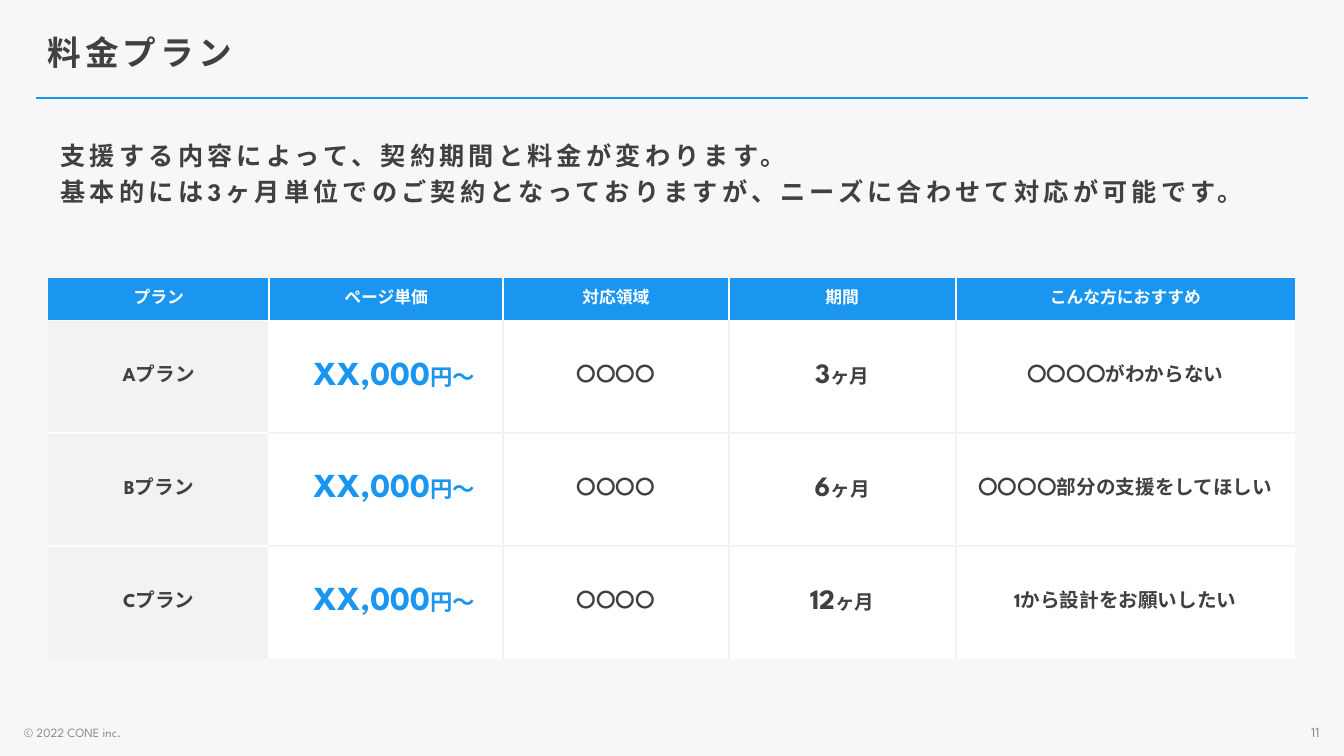
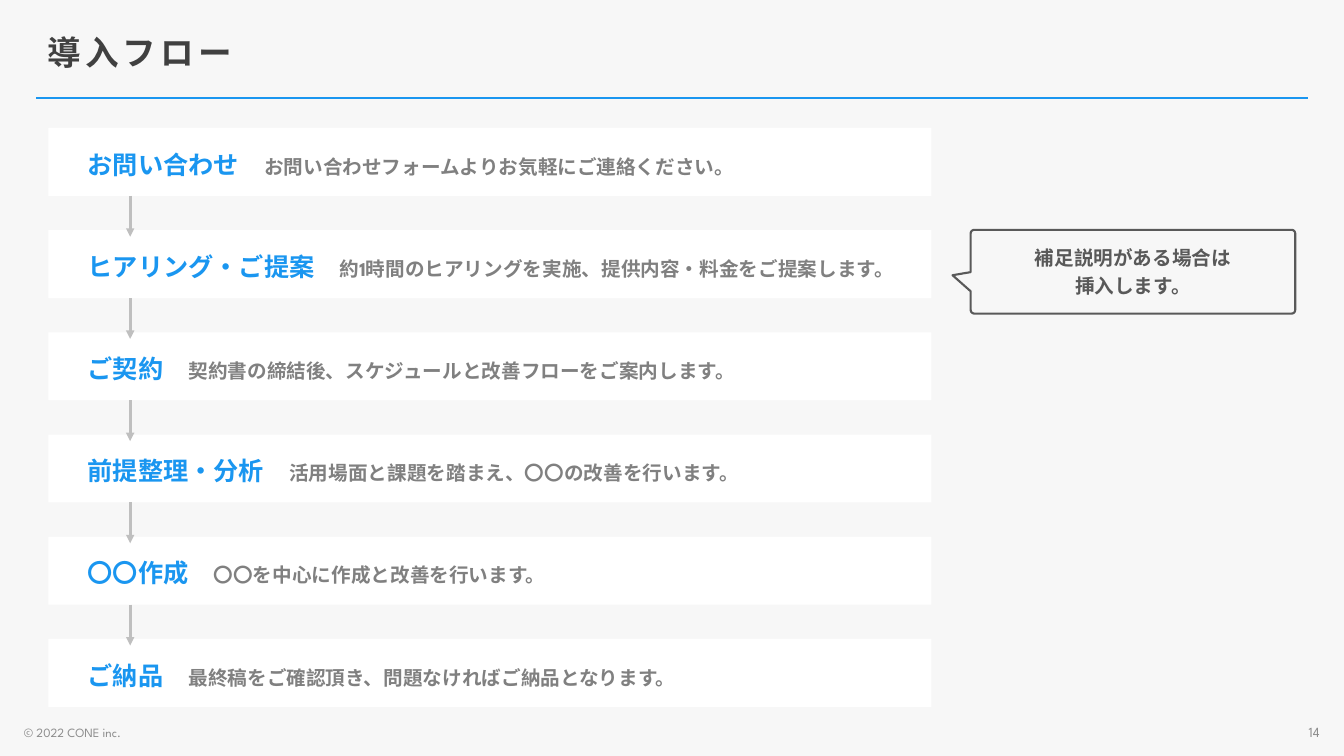
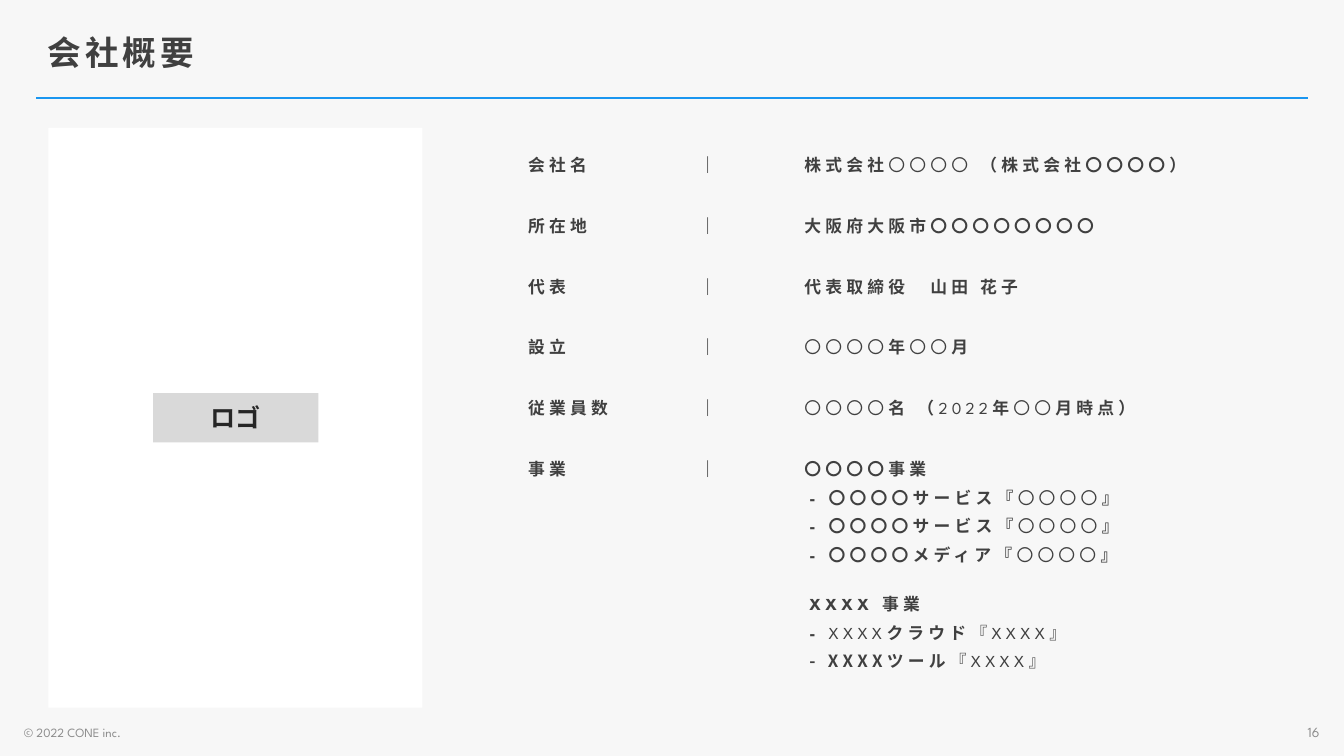
from dataclasses import dataclass
from itertools import pairwise
from math import cos, radians, sin
from typing import Optional, Sequence

from lxml.etree import SubElement
from pptx import Presentation
from pptx.dml.color import RGBColor
from pptx.enum.shapes import MSO_CONNECTOR as Conn, MSO_SHAPE as Shape
from pptx.enum.text import MSO_ANCHOR as Anchor, MSO_AUTO_SIZE as AutoSize, PP_ALIGN as Align
from pptx.oxml.ns import qn
from pptx.util import Pt


@dataclass(frozen=True)
class Theme:
    accent: str = "1A96F0"
    back: str = "F7F7F7"
    white: str = "FFFFFF"
    pale: str = "F2F2F2"
    ink: str = "404040"
    logo_ink: str = "262626"
    callout: str = "595959"
    muted: str = "808080"
    footer: str = "8C8C8C"
    arrow: str = "BFBFBF"
    logo: str = "D9D9D9"
    font: str = "League Spartan"
    cjk: str = "Noto Sans CJK JP"
    title: float = 24
    price: float = 24
    months: float = 20
    lead: float = 18
    unit: float = 16
    body: float = 14
    small: float = 12
    number: float = 10
    copyright: float = 9
    tracking: float = 3


T = Theme()
NO_STYLE = "{2D5ABB26-0587-4C30-8999-92F81FD0307C}"
LEFT, TOP = 34.6, 91.4
DEFAULT_INSETS = (7.2, 3.6, 7.2, 3.6)


@dataclass(frozen=True)
class Run:
    text: str
    size: float = T.body
    color: str = T.ink
    bold: bool = True
    tracking: float = 0
    latin: str = T.font
    cjk: str = T.font


@dataclass(frozen=True)
class Plan:
    name: str
    months: str
    audience: str


@dataclass(frozen=True)
class Step:
    name: str
    detail: str


@dataclass(frozen=True)
class Detail:
    """A line whose segments alternate between bold and regular."""
    segments: Sequence[str]
    before: float = 3
    bold_latin: str = T.font


@dataclass(frozen=True)
class Fact:
    label: str
    lines: Sequence[Detail]


PLANS = [
    Plan("Aプラン", "3", "〇〇〇〇がわからない"),
    Plan("Bプラン", "6", "〇〇〇〇部分の支援をしてほしい"),
    Plan("Cプラン", "12", "1から設計をお願いしたい"),
]
STEPS = [
    Step("お問い合わせ", "お問い合わせフォームよりお気軽にご連絡ください。"),
    Step("ヒアリング・ご提案", "約1時間のヒアリングを実施、提供内容・料金をご提案します。"),
    Step("ご契約", "契約書の締結後、スケジュールと改善フローをご案内します。"),
    Step("前提整理・分析", "活用場面と課題を踏まえ、〇〇の改善を行います。"),
    Step("〇〇作成", "〇〇を中心に作成と改善を行います。"),
    Step("ご納品", "最終稿をご確認頂き、問題なければご納品となります。"),
]
FACTS = [
    Fact("会社名", [Detail(["株式会社", "〇〇〇〇 ", "（株式会社〇〇〇〇）"])]),
    Fact("所在地", [Detail(["大阪府大阪市〇〇〇〇〇〇〇〇"])]),
    Fact("代表", [Detail(["代表取締役　山田 花子"])]),
    Fact("設立", [Detail(["", "〇〇〇〇", "年", "〇〇", "月"])]),
    Fact("従業員数", [Detail(["", "〇〇〇〇", "名 （", "2022", "年", "〇〇", "月時点）"])]),
    Fact("事業", [
        Detail(["〇〇〇〇事業"]),
        Detail(["- 〇〇〇〇サービス『", "〇〇〇〇", "』"]),
        Detail(["- 〇〇〇〇サービス『", "〇〇〇〇", "』"]),
        Detail(["- 〇〇〇〇メディア『", "〇〇〇〇", "』"]),
        Detail(["XXXX 事業"], before=18),
        Detail(["- ", "XXXX", "クラウド", "『XXXX』"]),
        Detail(["- XXXXツール", "『XXXX』"], bold_latin=T.cjk),
    ]),
]


def rgb(color: str) -> RGBColor:
    return RGBColor.from_string(color)


def add_runs(p, runs: Sequence[Run], align=Align.LEFT, before: float = 0,
             spacing: Optional[float] = None) -> None:
    p.alignment = align
    if before:
        p.space_before = Pt(before)
    if spacing:
        p.line_spacing = spacing
    for run in runs:
        r = p.add_run()
        r.text = run.text
        r.font.size = Pt(run.size)
        r.font.bold = run.bold
        r.font.color.rgb = rgb(run.color)
        r.font.name = run.latin
        props = r._r.get_or_add_rPr()
        SubElement(props, qn("a:ea"), typeface=run.cjk)
        if run.tracking:
            props.set("spc", str(round(run.tracking * 100)))


def write(tf, lines: Sequence[Sequence[Run]], align=Align.LEFT, before: float = 0,
          spacing: Optional[float] = None, anchor=Anchor.MIDDLE,
          insets: Sequence[float] = DEFAULT_INSETS) -> None:
    """Fill a text frame, one list of runs a paragraph."""
    tf.word_wrap = True
    tf.auto_size = AutoSize.NONE
    tf.vertical_anchor = anchor
    tf.margin_left, tf.margin_top, tf.margin_right, tf.margin_bottom = map(Pt, insets)
    for i, runs in enumerate(lines):
        p = tf.add_paragraph() if i else tf.paragraphs[0]
        add_runs(p, runs, align, before if i else 0, spacing)


def place(sp, x: float, y: float, w: float, h: float) -> None:
    sp.left, sp.top, sp.width, sp.height = map(Pt, (x, y, w, h))


def add_line(s, start: tuple[float, float], end: tuple[float, float], color: str,
             arrow: bool = False) -> None:
    line = s.shapes.add_connector(Conn.STRAIGHT, *map(Pt, (*start, *end)))
    line.line.color.rgb = rgb(color)
    line.line.width = Pt(2)
    if arrow:
        SubElement(line.line._get_or_add_ln(), qn("a:tailEnd"), type="triangle")
    SubElement(line._element.spPr, qn("a:effectLst"))


def add_box(s, x: float, y: float, w: float, h: float, fill: str):
    sp = s.shapes.add_shape(Shape.RECTANGLE, *map(Pt, (x, y, w, h)))
    sp.shadow.inherit = False
    sp.fill.solid()
    sp.fill.fore_color.rgb = rgb(fill)
    sp.line.fill.background()
    return sp


def add_slide(prs, title: str, number: int, layout: int = 5):
    """Add a slide with the shared title, rule and footer."""
    s = prs.slides.add_slide(prs.slide_layouts[layout])
    add_line(s, (26, 70), (934.5, 70), T.accent)
    place(s.shapes.title, 26.6, 15.1, 901.4, 45.4)
    write(s.shapes.title.text_frame, [[Run(title, T.title, tracking=T.tracking)]],
          spacing=0.9, insets=(7.2, 5.8, 7.2, 3.6))
    for x, text, size, align in (
        (10, "© 2022 CONE inc.", T.copyright, Align.LEFT),
        (733.7, str(number), T.number, Align.RIGHT),
    ):
        footer = s.shapes.add_textbox(*map(Pt, (x, 513.4, 216, 19.4)))
        write(footer.text_frame, [[Run(text, size, T.footer, bold=False)]], align)
    return s


def add_table(s, x: float, y: float, cols: Sequence[float], rows: Sequence[float]):
    """Add an unstyled table of the given column widths and row heights."""
    frame = s.shapes.add_table(len(rows), len(cols), *map(Pt, (x, y, sum(cols), sum(rows))))
    table = frame.table
    table.first_row = table.horz_banding = False
    table._tbl.tblPr.find(qn("a:tableStyleId")).text = NO_STYLE
    for col, width in zip(table.columns, cols):
        col.width = Pt(width)
    for row, height in zip(table.rows, rows):
        row.height = Pt(height)
    return table


def set_insets(cell, insets: Sequence[float]) -> None:
    cell.margin_left, cell.margin_top, cell.margin_right, cell.margin_bottom = map(Pt, insets)


def set_border(cell, side: str, color: str) -> None:
    ln = SubElement(cell._tc.get_or_add_tcPr(), qn(f"a:ln{side}"), w=str(Pt(1.5)))
    SubElement(SubElement(ln, qn("a:solidFill")), qn("a:srgbClr"), val=color)


def draw_price_cell(table, row: int, col: int, runs: Sequence[Run]) -> None:
    cell = table.cell(row, col)
    last_row, last_col = len(table.rows) - 1, len(table.columns) - 1
    is_price = row > 0 and col == 1
    set_insets(cell, (7.2, 3.6, 20.2 if is_price else 7.2, 3.6))
    cell.vertical_anchor = Anchor.MIDDLE
    add_runs(cell.text_frame.paragraphs[0], runs, Align.RIGHT if is_price else Align.CENTER)

    def edge(r: int, c: int) -> str:
        return T.white if r == 0 or c == 0 else T.pale

    for side, inner, color in (
        ("L", col > 0, edge(row, col - 1)),
        ("R", col < last_col, edge(row, col)),
        ("T", row > 0, edge(row - 1, col)),
        ("B", row < last_row, edge(row, col)),
    ):
        if inner:
            set_border(cell, side, color)
    cell.fill.solid()
    cell.fill.fore_color.rgb = rgb(T.accent if row == 0 else T.pale if col == 0 else T.white)


def build_pricing(prs) -> None:
    s = add_slide(prs, "料金プラン", 11, layout=1)
    body = s.placeholders[1]
    place(body, 36, TOP, 887.8, 65.5)
    lead = ["支援する内容によって、契約期間と料金が変わります。",
            "基本的には3ヶ月単位でのご契約となっておりますが、ニーズに合わせて対応が可能です。"]
    write(body.text_frame, [[Run(text, T.lead, tracking=T.tracking)] for text in lead],
          before=6, spacing=0.9, anchor=Anchor.TOP, insets=(7.2, 11.5, 7.2, 3.6))
    for p in body.text_frame.paragraphs:
        props = p._p.get_or_add_pPr()
        props.set("marL", "0")
        props.set("indent", "0")
        SubElement(props, qn("a:buNone"))

    heads = ["プラン", "ページ単価", "対応領域", "期間", "こんな方におすすめ"]
    grid = [[[Run(head, T.small, T.white)] for head in heads]]
    for plan in PLANS:
        grid.append([
            [Run(plan.name)],
            [Run("XX,000", T.price, T.accent), Run("円〜", T.unit, T.accent)],
            [Run("〇〇〇〇")],
            [Run(plan.months, T.months), Run("ヶ月")],
            [Run(plan.audience)],
        ])
    table = add_table(s, LEFT, 198.8, [157.7, 167, 161.3, 162, 242.6],
                      [30.2] + [80.6] * len(PLANS))
    for i, row in enumerate(grid):
        for j, runs in enumerate(row):
            draw_price_cell(table, i, j, runs)


def draw_callout(s, x: float, y: float, w: float, h: float, lines: Sequence[str]) -> None:
    """Draw a rounded outline with a tail on its left side."""
    radius, tail = 2.6, 13
    points = []
    for cx, cy, start in (
        (x + radius, y + radius, 180),
        (x + w - radius, y + radius, 270),
        (x + w - radius, y + h - radius, 0),
        (x + radius, y + h - radius, 90),
    ):
        for angle in range(start, start + 91, 15):
            a = radians(angle)
            points.append((cx + radius * cos(a), cy + radius * sin(a)))
    points += [(x, y + 43.9), (x - tail, y + 32.4), (x, y + 30.2)]
    first, *rest = [(Pt(px), Pt(py)) for px, py in points]
    outline = s.shapes.build_freeform(*first, scale=1.0)
    outline.add_line_segments(rest, close=True)
    sp = outline.convert_to_shape()
    sp.shadow.inherit = False
    sp.fill.background()
    sp.line.color.rgb = rgb(T.callout)
    sp.line.width = Pt(1.5)
    write(sp.text_frame, [[Run(line, color=T.callout)] for line in lines], Align.CENTER,
          before=3, insets=(7.2 + tail, 5.8, 7.2, 5.8))


def build_flow(prs) -> None:
    s = add_slide(prs, "導入フロー", 14)
    height, pitch, arrow_x, arrow_length = 48.5, 73, 93, 29.2
    tops = [TOP + i * pitch for i in range(len(STEPS))]
    for step, y in zip(STEPS, tops):
        bar = add_box(s, LEFT, y, 630.7, height, T.white)
        write(bar.text_frame, [[Run(step.name + "　", T.lead, T.accent),
                                Run(step.detail, color=T.muted)]],
              insets=(28.1, 5.8, 7.2, 2.9))
    for y, _ in pairwise(tops):
        add_line(s, (arrow_x, y + height), (arrow_x, y + height + arrow_length),
                 T.arrow, arrow=True)
    draw_callout(s, 693.4, 164.2, 231.8, 59.8, ["補足説明がある場合は", "挿入します。"])


def fact_run(text: str, bold: bool = True, latin: str = T.font) -> Run:
    return Run(text, T.small, bold=bold, tracking=T.tracking, latin=latin, cjk=T.cjk)


def draw_fact(label_cell, value_cell, fact: Fact) -> None:
    value_x = 75
    for cell in (label_cell, value_cell):
        cell.fill.background()
        cell.vertical_anchor = Anchor.TOP
        set_insets(cell, (7.2, 17.3, 7.2, 3.6))
    add_runs(label_cell.text_frame.paragraphs[0], [fact_run(fact.label)])
    tf = value_cell.text_frame
    for i, line in enumerate(fact.lines):
        p = tf.add_paragraph() if i else tf.paragraphs[0]
        props = p._p.get_or_add_pPr()
        if i:
            props.set("marL", str(Pt(value_x + 3.6)))
        else:
            tabs = SubElement(props, qn("a:tabLst"))
            SubElement(tabs, qn("a:tab"), pos=str(Pt(value_x)), algn="l")
        runs = [fact_run(segment, k % 2 == 0, T.font if k % 2 else line.bold_latin)
                for k, segment in enumerate(line.segments) if segment]
        if i == 0:
            runs.insert(0, fact_run("｜\t"))
        add_runs(p, runs, before=line.before if i else 0)


def build_company(prs) -> None:
    s = add_slide(prs, "会社概要", 16)
    add_box(s, LEFT, TOP, 267.1, 414, T.white)
    table = add_table(s, 370, TOP, [122.4, 432.7], [43.4] * (len(FACTS) - 1) + [197])
    for i, fact in enumerate(FACTS):
        draw_fact(table.cell(i, 0), table.cell(i, 1), fact)
    logo = add_box(s, 109.4, 280.8, 118.1, 35.3, T.logo)
    write(logo.text_frame, [[Run("ロゴ", T.lead, T.logo_ink, latin=T.cjk, cjk=T.cjk)]],
          Align.CENTER)


def main() -> None:
    prs = Presentation()
    prs.slide_width, prs.slide_height = Pt(960), Pt(540)
    back = prs.slide_master.background.fill
    back.solid()
    back.fore_color.rgb = rgb(T.back)
    build_pricing(prs)
    build_flow(prs)
    build_company(prs)
    prs.save("out.pptx")


if __name__ == "__main__":
    main()
